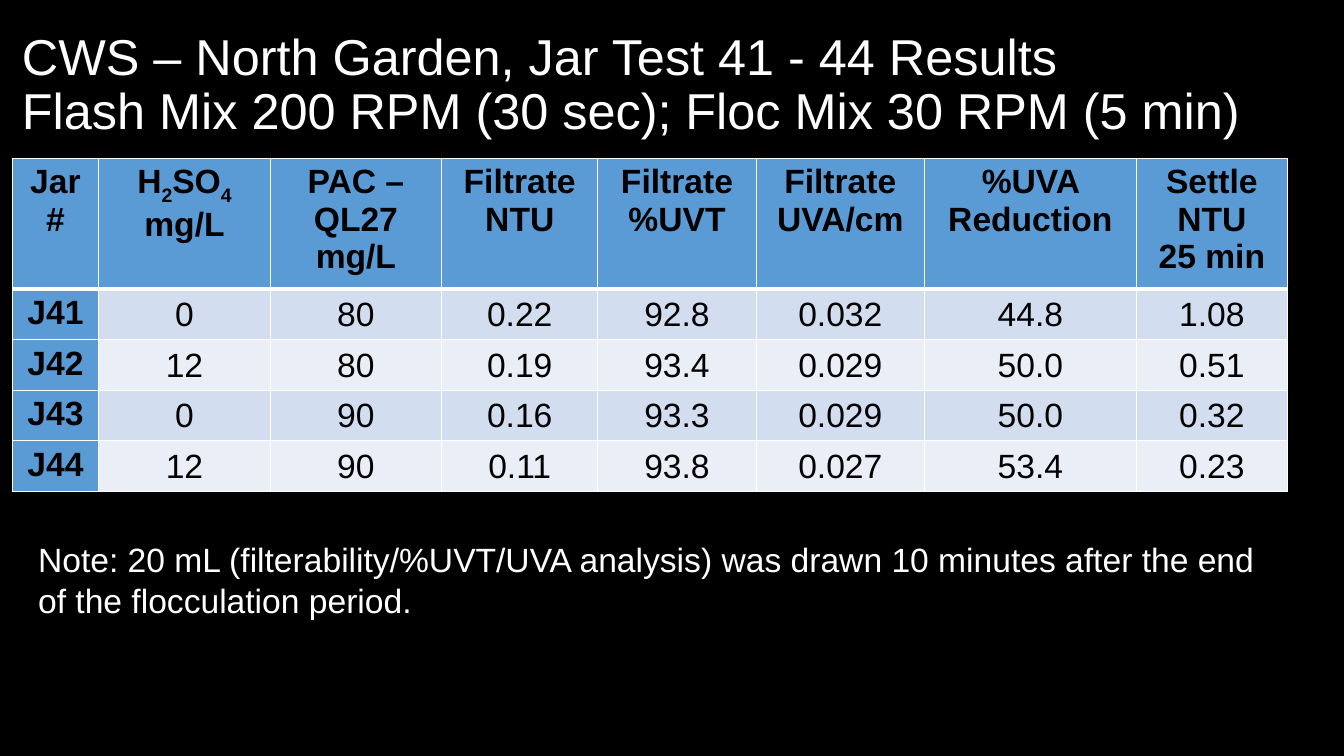
from dataclasses import dataclass

from lxml.etree import SubElement as Sub
from pptx import Presentation
from pptx.dml.color import RGBColor as Rgb
from pptx.enum.text import MSO_ANCHOR as Anchor, PP_ALIGN as Align
from pptx.oxml.ns import qn
from pptx.util import Emu, Pt

PX = 9144
FONT = "Arial"
HUES = {
    "back": "000000",
    "ink": "000000",
    "light": "FFFFFF",
    "head": "5B9BD5",
    "odd": "D2DEEF",
    "even": "EAEFF7",
}


@dataclass
class Note:
    left: int
    top: int
    width: int
    height: int
    lines: list[str]
    size: int
    anchor: Anchor = Anchor.TOP
    space: float = 1.0


@dataclass
class Col:
    width: int
    head: str
    vals: list[str]


TITLE = Note(
    12, 13, 1303, 145,
    ["CWS – North Garden, Jar Test 41 - 44 Results\n"
     "Flash Mix 200 RPM (30 sec); Floc Mix 30 RPM (5 min)"],
    36, Anchor.MIDDLE, 0.9,
)
NOTE = Note(
    28, 530, 1248, 91,
    ["Note: 20 mL (filterability/%UVT/UVA analysis) was drawn 10 minutes after the end",
     "of the flocculation period."],
    24,
)
COLS = [
    Col(86, "Jar#", ["J41", "J42", "J43", "J44"]),
    Col(170, "H|2|SO|4\nmg/L", ["0", "12", "0", "12"]),
    Col(170, "PAC – QL27\nmg/L", ["80", "80", "90", "90"]),
    Col(155, "Filtrate\nNTU", ["0.22", "0.19", "0.16", "0.11"]),
    Col(157, "Filtrate\n%UVT", ["92.8", "93.4", "93.3", "93.8"]),
    Col(167, "Filtrate\nUVA/cm", ["0.032", "0.029", "0.029", "0.027"]),
    Col(210, "%UVA Reduction", ["44.8", "50.0", "50.0", "53.4"]),
    Col(150, "Settle\nNTU\n25 min", ["1.08", "0.51", "0.32", "0.23"]),
]
ROWS = [121, 47, 47, 47, 47]


def px(val: int) -> Emu:
    return Emu(val * PX)


def style(para, size: int, hue: str, bold: bool = False) -> None:
    font = para.font
    font.name = FONT
    font.size = Pt(size)
    font.bold = bold
    font.color.rgb = Rgb.from_string(HUES[hue])


def add_note(slide, note: Note) -> None:
    box = slide.shapes.add_textbox(
        px(note.left), px(note.top), px(note.width), px(note.height))
    frame = box.text_frame
    frame.word_wrap = True
    frame.vertical_anchor = note.anchor
    for i, line in enumerate(note.lines):
        para = frame.add_paragraph() if i else frame.paragraphs[0]
        para.text = line
        para.line_spacing = note.space
        style(para, note.size, "light")


def add_edges(cell, row: int) -> None:
    props = cell._tc.get_or_add_tcPr()
    wide = {0: "lnB", 1: "lnT"}.get(row)
    for i, tag in enumerate(("lnL", "lnR", "lnT", "lnB")):
        line = Sub(props, qn(f"a:{tag}"), w=str(Pt(3 if tag == wide else 1)))
        fill = Sub(line, qn("a:solidFill"))
        Sub(fill, qn("a:srgbClr"), val=HUES["light"])
        props.remove(line)
        props.insert(i, line)


def fill_cell(cell, text: str, row: int, col: int) -> None:
    head = row == 0 or col == 0
    hue = "head" if head else "odd" if row % 2 else "even"
    cell.fill.solid()
    cell.fill.fore_color.rgb = Rgb.from_string(HUES[hue])
    if not head:
        cell.vertical_anchor = Anchor.MIDDLE
        cell.margin_left = cell.margin_right = cell.margin_top = px(1)
        cell.margin_bottom = px(0)
    frame = cell.text_frame
    for i, line in enumerate(text.split("\n")):
        para = frame.add_paragraph() if i else frame.paragraphs[0]
        para.alignment = Align.CENTER
        style(para, 24, "ink", head)
        for j, part in enumerate(line.split("|")):
            run = para.add_run()
            run.text = part
            if j % 2:
                run._r.get_or_add_rPr().set("baseline", "-25000")
    add_edges(cell, row)


def add_grid(slide) -> None:
    width = sum(col.width for col in COLS)
    table = slide.shapes.add_table(
        len(ROWS), len(COLS), px(12), px(157), px(width), px(sum(ROWS))).table
    table.first_col = True
    for row, height in enumerate(ROWS):
        table.rows[row].height = px(height)
    for c, col in enumerate(COLS):
        table.columns[c].width = px(col.width)
        for r, text in enumerate([col.head, *col.vals]):
            fill_cell(table.cell(r, c), text, r, c)


def main() -> None:
    deck = Presentation()
    deck.slide_width, deck.slide_height = px(1333), px(750)
    slide = deck.slides.add_slide(deck.slide_layouts[6])
    back = slide.background.fill
    back.solid()
    back.fore_color.rgb = Rgb.from_string(HUES["back"])
    add_note(slide, TITLE)
    add_grid(slide)
    add_note(slide, NOTE)
    deck.save("out.pptx")


if __name__ == "__main__":
    main()
